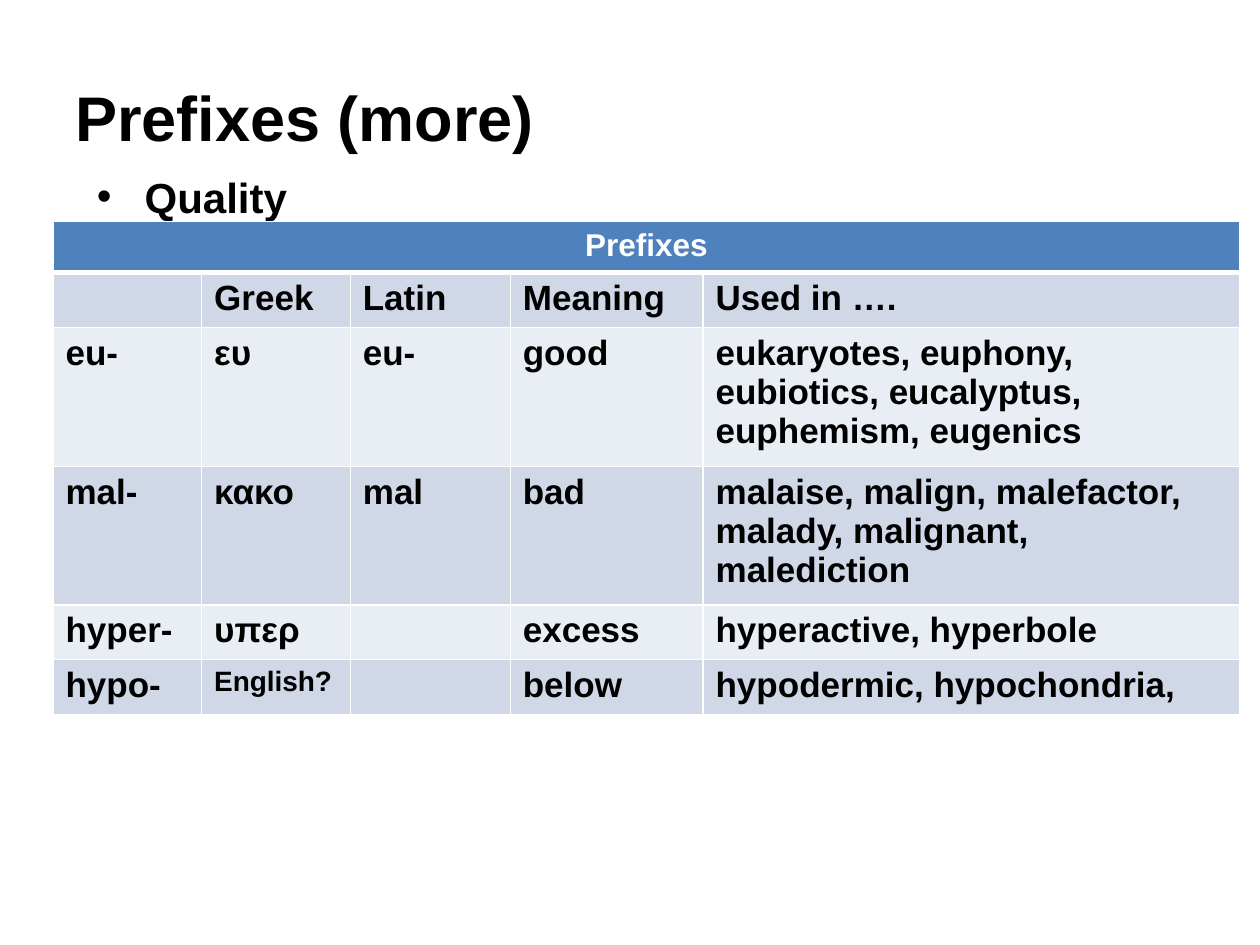
from lxml.etree import SubElement
from pptx import Presentation
from pptx.dml.color import RGBColor
from pptx.enum.text import MSO_ANCHOR, PP_ALIGN
from pptx.oxml.ns import qn
from pptx.util import Inches, Pt

FONT = "Arial"
BLACK, WHITE = "000000", "FFFFFF"
HEADER_FILL = "4F81BD"
BAND_FILLS = ("E9EDF4", "D0D8E8")
COLUMN_WIDTHS = (1.18, 1.18, 1.27, 1.53, 4.26)
ROW_HEIGHTS = (0.4, 0.44, 1.03, 1.03, 0.41, 0.41)
PREFIX_ROWS = (
    ("", "Greek", "Latin", "Meaning", "Used in …."),
    ("eu-", "ευ", "eu-", "good",
     "eukaryotes, euphony, eubiotics, eucalyptus,\neuphemism, eugenics"),
    ("mal-", "κακο", "mal", "bad",
     "malaise, malign, malefactor, malady, malignant, malediction"),
    ("hyper-", "υπερ", "", "excess", "hyperactive, hyperbole"),
    ("hypo-", "English?", "", "below", "hypodermic, hypochondria,"),
)


def color(value):
    """Return the colour for a hex string."""
    return RGBColor.from_string(value)


def write_text(text_frame, text, size, font_color=BLACK, alignment=PP_ALIGN.LEFT):
    """Fill a text frame with bold text in one style."""
    text_frame.text = text
    for paragraph in text_frame.paragraphs:
        paragraph.alignment = alignment
        for font in (paragraph.font, *(run.font for run in paragraph.runs)):
            font.name, font.size, font.bold = FONT, Pt(size), True
            font.color.rgb = color(font_color)


def add_text(slide, left, top, width, height, text, size, anchor=MSO_ANCHOR.TOP):
    """Add a wrapping text box and return its first paragraph."""
    shape = slide.shapes.add_textbox(*map(Inches, (left, top, width, height)))
    shape.text_frame.word_wrap = True
    shape.text_frame.vertical_anchor = anchor
    write_text(shape.text_frame, text, size)
    return shape.text_frame.paragraphs[0]


def add_bullet(paragraph, indent):
    """Give a paragraph a round bullet with a hanging indent."""
    properties = paragraph._p.get_or_add_pPr()
    properties.set("marL", str(Inches(indent)))
    properties.set("indent", str(-Inches(indent)))
    SubElement(properties, qn("a:buFont"), typeface=FONT)
    SubElement(properties, qn("a:buChar"), char="•")


def style_cell(cell, fill, bottom_width=1, top_width=1):
    """Give a cell white borders and a solid fill."""
    properties = cell._tc.get_or_add_tcPr()
    widths = {"L": 1, "R": 1, "T": top_width, "B": bottom_width}
    for side, width in widths.items():
        line = SubElement(properties, qn(f"a:ln{side}"), w=str(Pt(width)))
        line_fill = SubElement(line, qn("a:solidFill"))
        SubElement(line_fill, qn("a:srgbClr"), val=WHITE)
    cell.fill.solid()
    cell.fill.fore_color.rgb = color(fill)


def add_prefix_table(slide, left, top):
    """Add the table of prefixes under one merged header."""
    shape = slide.shapes.add_table(
        len(ROW_HEIGHTS), len(COLUMN_WIDTHS), Inches(left), Inches(top),
        Inches(sum(COLUMN_WIDTHS)), Inches(sum(ROW_HEIGHTS)))
    table = shape.table
    for column, width in zip(table.columns, COLUMN_WIDTHS):
        column.width = Inches(width)
    for row, height in zip(table.rows, ROW_HEIGHTS):
        row.height = Inches(height)
    for cell in table.rows[0].cells:
        style_cell(cell, HEADER_FILL, bottom_width=3)
    header = table.cell(0, 0)
    header.merge(table.cell(0, len(COLUMN_WIDTHS) - 1))
    write_text(header.text_frame, "Prefixes", 18, WHITE, PP_ALIGN.CENTER)
    for row_index, texts in enumerate(PREFIX_ROWS, start=1):
        for column_index, text in enumerate(texts):
            cell = table.cell(row_index, column_index)
            style_cell(cell, BAND_FILLS[row_index % 2],
                       top_width=3 if row_index == 1 else 1)
            write_text(cell.text_frame, text, 16 if text == "English?" else 20)


def main():
    """Build the slide and save it."""
    presentation = Presentation()
    presentation.slide_width, presentation.slide_height = Inches(10), Inches(7.5)
    slide = presentation.slides.add_slide(presentation.slide_layouts[6])
    add_text(slide, 0.5, 0.3, 9, 1.25, "Prefixes (more)", 36, MSO_ANCHOR.MIDDLE)
    quality = add_text(slide, 0.67, 1.31, 8.5, 5.26, "Quality", 24)
    quality.space_before = Pt(4.8)
    add_bullet(quality, 0.38)
    add_prefix_table(slide, 0.42, 1.76)
    presentation.save("out.pptx")


if __name__ == "__main__":
    main()
